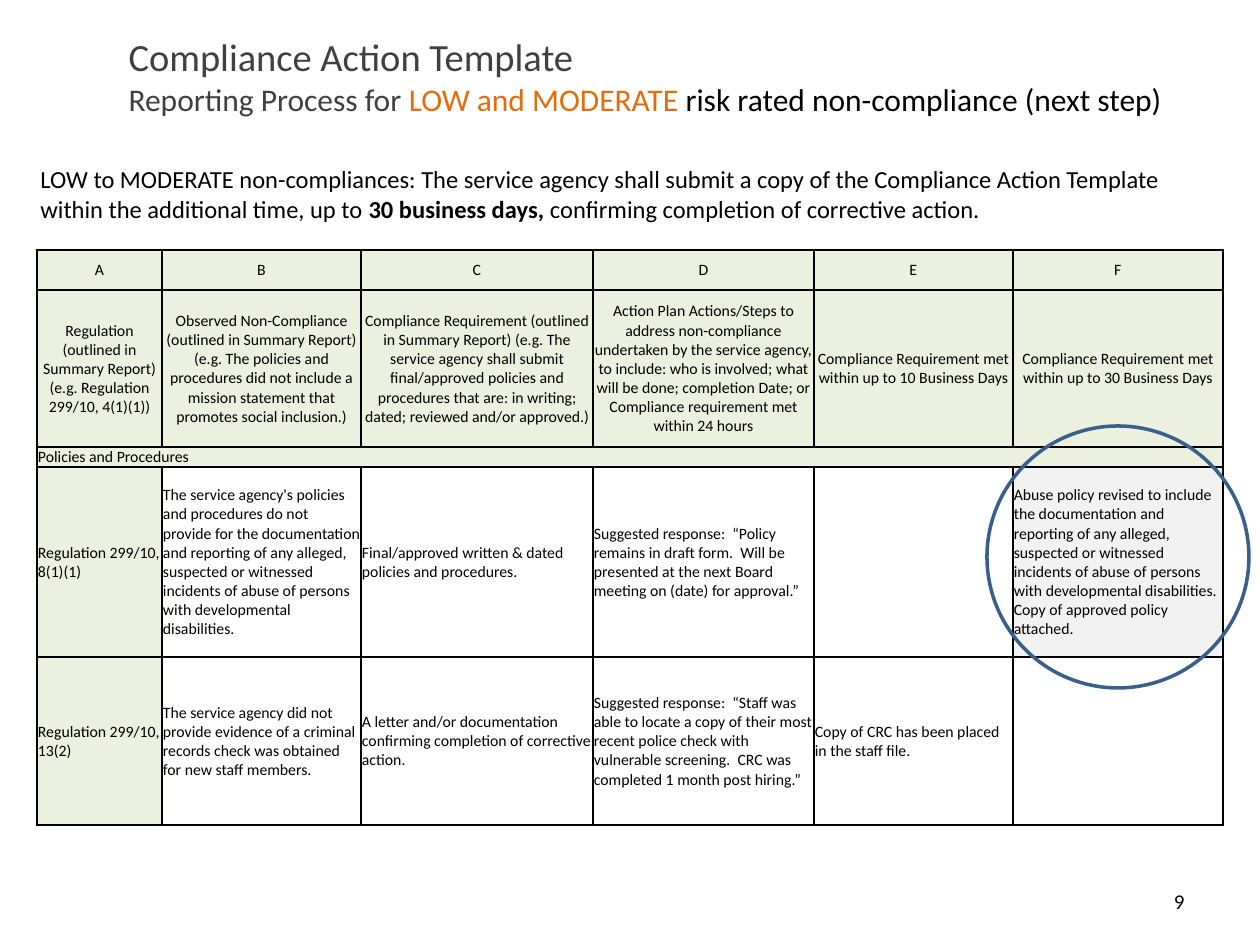
import pptx
import pptx.dml.color
import pptx.enum.shapes
import pptx.enum.text
import pptx.oxml
import pptx.oxml.ns
import pptx.util

PX = 914400 // 126
COLORS = {
    "black": "000000",
    "title": "404040",
    "accent": "E46C0A",
    "green": "EBF1DE",
    "grey": "F2F2F2",
    "white": "FFFFFF",
    "ring": "3A5F8C",
}
ALIGN = pptx.enum.text.PP_ALIGN
MIDDLE = pptx.enum.text.MSO_ANCHOR.MIDDLE
TOP = pptx.enum.text.MSO_ANCHOR.TOP

COLUMN_WIDTHS = [125, 199, 232, 221, 199, 210]
ROW_HEIGHTS = [40, 157, 20, 190, 168]
SECTION_ROW = 2
HIGHLIGHT = (3, 5)
ROWS = [
    list("ABCDEF"),
    [
        "Regulation (outlined in Summary Report) (e.g. Regulation 299/10, 4(1)(1))",
        "Observed Non-Compliance (outlined in Summary Report) (e.g. The policies and "
        "procedures did not include a mission statement that promotes social inclusion.)",
        "Compliance Requirement (outlined in Summary Report) (e.g. The service agency shall "
        "submit final/approved policies and procedures that are: in writing; dated; "
        "reviewed and/or approved.)",
        "Action Plan Actions/Steps to address non-compliance undertaken by the service "
        "agency, to include: who is involved; what will be done; completion Date; or "
        "Compliance requirement met within 24 hours",
        "Compliance Requirement met within up to 10 Business Days",
        "Compliance Requirement met within up to 30 Business Days",
    ],
    ["Policies and Procedures", "", "", "", "", ""],
    [
        "Regulation 299/10, 8(1)(1)",
        "The service agency's policies and procedures do not provide for the documentation "
        "and reporting of any alleged, suspected or witnessed incidents of abuse of persons "
        "with developmental disabilities.",
        "Final/approved written & dated policies and procedures.",
        "Suggested response:  “Policy remains in draft form.  Will be presented at the next "
        "Board meeting on (date) for approval.”",
        "",
        "Abuse policy revised to include the documentation and reporting of any alleged, "
        "suspected or witnessed incidents of abuse of persons with developmental "
        "disabilities.  Copy of approved policy attached.",
    ],
    [
        "Regulation 299/10, 13(2)",
        "The service agency did not provide evidence of a criminal records check was "
        "obtained for new staff members.",
        "A letter and/or documentation confirming completion of corrective action.",
        "Suggested response:  “Staff was able to locate a copy of their most recent police "
        "check with vulnerable screening.  CRC was completed 1 month post hiring.”",
        "Copy of CRC has been placed in the staff file.",
        "",
    ],
]


def color(name):
    return pptx.dml.color.RGBColor.from_string(COLORS[name])


class SlideBuilder:
    font_name = "Calibri"

    def __init__(self, slide):
        self.slide = slide

    def style(self, font, size, color_name="black"):
        font.name = self.font_name
        font.size = pptx.util.Pt(size)
        font.color.rgb = color(color_name)

    def title(self, box, lines):
        shape = self.slide.shapes.title
        shape.left, shape.top, shape.width, shape.height = (value * PX for value in box)
        frame = shape.text_frame
        frame.word_wrap = True
        frame.auto_size = pptx.enum.text.MSO_AUTO_SIZE.NONE
        frame.vertical_anchor = MIDDLE
        paragraph = frame.paragraphs[0]
        paragraph.alignment = ALIGN.LEFT
        for index, (size, runs) in enumerate(lines):
            if index:
                paragraph.add_line_break()
            for text, color_name in runs:
                run = paragraph.add_run()
                run.text = text
                self.style(run.font, size, color_name)

    def text(self, box, runs, size, align=ALIGN.LEFT, anchor=TOP):
        shape = self.slide.shapes.add_textbox(*(value * PX for value in box))
        frame = shape.text_frame
        frame.word_wrap = True
        frame.vertical_anchor = anchor
        paragraph = frame.paragraphs[0]
        paragraph.alignment = align
        self.style(paragraph.font, size)
        for text, bold in runs:
            run = paragraph.add_run()
            run.text = text
            run.font.bold = bold

    def borders(self, cell):
        properties = cell._tc.get_or_add_tcPr()
        for side in "LRTB":
            properties.append(pptx.oxml.parse_xml(
                f'<a:ln{side} {pptx.oxml.ns.nsdecls("a")} w="12700"><a:solidFill>'
                f'<a:srgbClr val="{COLORS["black"]}"/></a:solidFill></a:ln{side}>'
            ))

    def cell(self, cell, text, fill, align):
        self.borders(cell)
        cell.fill.solid()
        cell.fill.fore_color.rgb = color(fill)
        cell.margin_left = cell.margin_right = cell.margin_top = PX
        cell.margin_bottom = 0
        cell.vertical_anchor = MIDDLE
        cell.text = text
        paragraph = cell.text_frame.paragraphs[0]
        paragraph.alignment = align
        self.style(paragraph.font, 9)

    def table(self, left, top):
        table = self.slide.shapes.add_table(
            len(ROWS), len(COLUMN_WIDTHS), left * PX, top * PX,
            sum(COLUMN_WIDTHS) * PX, sum(ROW_HEIGHTS) * PX,
        ).table
        table.first_row = table.horz_banding = False
        for column, width in zip(table.columns, COLUMN_WIDTHS):
            column.width = width * PX
        for row, height in zip(table.rows, ROW_HEIGHTS):
            row.height = height * PX
        for r, texts in enumerate(ROWS):
            for c, text in enumerate(texts):
                fill = "green" if r <= SECTION_ROW or c == 0 else "white"
                if (r, c) == HIGHLIGHT:
                    fill = "grey"
                align = ALIGN.CENTER if r < SECTION_ROW else ALIGN.LEFT
                self.cell(table.cell(r, c), text, fill, align)
        last_column = len(COLUMN_WIDTHS) - 1
        table.cell(SECTION_ROW, 0).merge(table.cell(SECTION_ROW, last_column))

    def ring(self, left, top, diameter):
        shape = self.slide.shapes.add_shape(
            pptx.enum.shapes.MSO_SHAPE.FLOWCHART_CONNECTOR,
            left * PX, top * PX, diameter * PX, diameter * PX,
        )
        shape.shadow.inherit = False
        shape.fill.background()
        shape.line.color.rgb = color("ring")
        shape.line.width = pptx.util.Pt(2)


def main():
    presentation = pptx.Presentation()
    presentation.slide_width = pptx.util.Inches(10)
    presentation.slide_height = pptx.util.Inches(7.5)
    builder = SlideBuilder(presentation.slides.add_slide(presentation.slide_layouts[5]))
    builder.title((116, 39, 1071, 73), [
        (22, [("Compliance Action Template", "title")]),
        (18, [
            ("Reporting Process for ", "title"),
            ("LOW and MODERATE ", "accent"),
            ("risk rated non-compliance (next step)", "black"),
        ]),
    ])
    builder.text((28, 158, 1191, 91), [
        ("LOW to MODERATE non-compliances: The service agency shall submit a copy of the "
         "Compliance Action Template within the additional time, up to ", False),
        ("30 business days, ", True),
        ("confirming completion of corrective action.", False),
    ], 14)
    builder.table(37, 250)
    builder.ring(987, 426, 262)
    builder.text((903, 876, 294, 50), [("9", False)], 12, ALIGN.RIGHT, MIDDLE)
    presentation.save("out.pptx")


if __name__ == "__main__":
    main()
